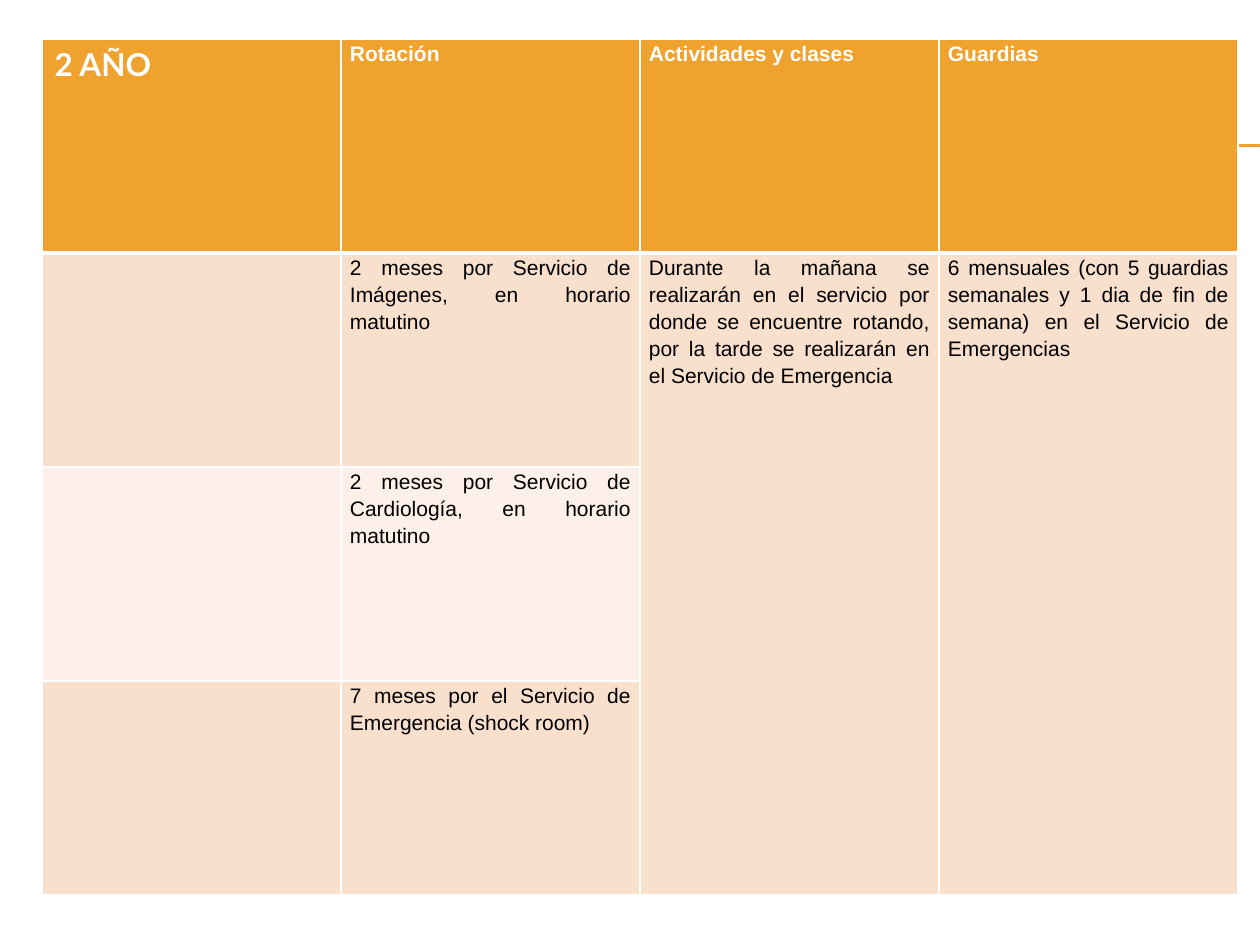
from dataclasses import dataclass

from lxml.etree import SubElement
from pptx import Presentation
from pptx.dml.color import RGBColor
from pptx.enum.shapes import MSO_CONNECTOR as Connector
from pptx.enum.text import PP_ALIGN as Align
from pptx.oxml import parse_xml
from pptx.oxml.ns import nsdecls, qn
from pptx.util import Emu, Pt

ORANGE = RGBColor(0xF0, 0xA2, 0x2E)
PEACH = RGBColor(0xF9, 0xE0, 0xCD)
CREAM = RGBColor(0xFC, 0xF0, 0xE8)
WHITE = RGBColor(0xFF, 0xFF, 0xFF)
BLACK = RGBColor(0x00, 0x00, 0x00)

ROWS, COLS = 4, 4
LEFT, TOP, COL_W, ROW_H = 42, 39, 299, 214
ROW_FILLS = (ORANGE, PEACH, CREAM, PEACH)


@dataclass
class CellText:
    row: int
    col: int
    text: str
    row_span: int = 1


TITLE = "2 AÑO"
CELLS = [
    CellText(0, 1, "Rotación"),
    CellText(0, 2, "Actividades y clases"),
    CellText(0, 3, "Guardias"),
    CellText(1, 1, "2 meses por Servicio de Imágenes, en horario matutino"),
    CellText(1, 2, "Durante la mañana se realizarán en el servicio por donde se "
                   "encuentre rotando, por la tarde se realizarán en el Servicio "
                   "de Emergencia", 3),
    CellText(1, 3, "6 mensuales (con 5 guardias semanales y 1 dia de fin de "
                   "semana) en el Servicio de Emergencias", 3),
    CellText(2, 1, "2 meses por Servicio de Cardiología, en horario matutino"),
    CellText(3, 1, "7 meses por el Servicio de Emergencia (shock room)"),
]


def px(n: int) -> Emu:
    """Pixels at 126 to the inch."""
    return Emu(round(n * 914400 / 126))


def add_rule(slide, y: int) -> None:
    line = slide.shapes.add_connector(Connector.STRAIGHT, px(71), px(y), px(1260), px(y))
    line.line.color.rgb = ORANGE
    line.line.width = Pt(0.75)
    SubElement(line._element.spPr, qn("a:effectLst"))


def style_cell(cell, row: int) -> None:
    """Fill the cell and draw its white borders, thicker under the header."""
    cell.fill.solid()
    cell.fill.fore_color.rgb = ROW_FILLS[row]
    widths = {"L": 1, "R": 1, "T": 3 if row == 1 else 1, "B": 3 if row == 0 else 1}
    for i, (side, width) in enumerate(widths.items()):
        border = parse_xml(
            f'<a:ln{side} {nsdecls("a")} w="{Pt(width)}"><a:solidFill>'
            f'<a:srgbClr val="{WHITE}"/></a:solidFill></a:ln{side}>')
        cell._tc.get_or_add_tcPr().insert(i, border)


def write(cell, text: str, font: str, size: int, header: bool) -> None:
    p = cell.text_frame.paragraphs[0]
    p.text = text
    f = p.runs[0].font
    f.name, f.size, f.bold = font, Pt(size), header
    f.color.rgb = WHITE if header else BLACK


def write_body(table, item: CellText) -> None:
    cell = table.cell(item.row, item.col)
    if item.row_span > 1:
        cell.merge(table.cell(item.row + item.row_span - 1, item.col))
    write(cell, item.text, "Arial", 12, item.row == 0)
    cell.margin_left = cell.margin_right = px(9)
    cell.margin_top = cell.margin_bottom = 0
    p = cell.text_frame.paragraphs[0]
    p.alignment = Align.JUSTIFY
    p.line_spacing = 1.15


def main() -> None:
    prs = Presentation()
    prs.slide_width, prs.slide_height = px(1260), px(945)
    slide = prs.slides.add_slide(prs.slide_layouts[6])

    # Double rule behind the table
    for y in (145, 146):
        add_rule(slide, y)

    # Table grid
    table = slide.shapes.add_table(ROWS, COLS, px(LEFT), px(TOP),
                                   px(COLS * COL_W), px(ROWS * ROW_H)).table
    for column in table.columns:
        column.width = px(COL_W)
    for i, row in enumerate(table.rows):
        row.height = px(ROW_H)
        for cell in row.cells:
            style_cell(cell, i)

    # Table text
    write(table.cell(0, 0), TITLE, "Lato", 18, True)
    for item in CELLS:
        write_body(table, item)

    prs.save("out.pptx")


if __name__ == "__main__":
    main()
